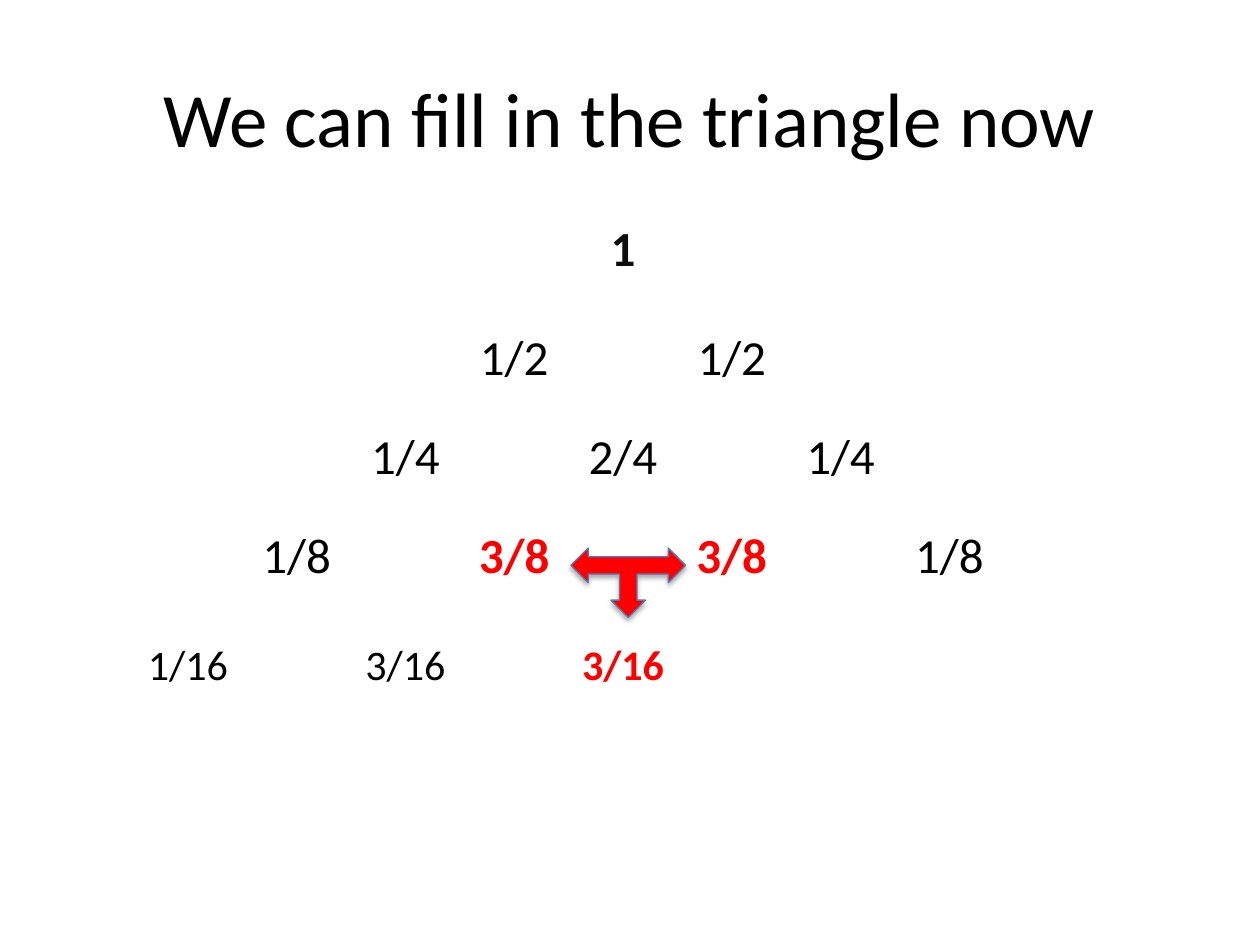
"""Build a slide with a partly filled probability triangle."""
import lxml.etree
import pptx
import pptx.dml.color
import pptx.enum.shapes
import pptx.enum.text
import pptx.oxml.ns
import pptx.util

Cm = pptx.util.Cm
Pt = pptx.util.Pt
qn = pptx.oxml.ns.qn

FONT = "Calibri"
COLOURS = {
    "paper": "FFFFFF",
    "text": "000000",
    "apex": "0D0D0D",
    "highlight": "FF0000",
    "outline": "4B7EBC",
}
TRIANGLE = [
    ["1"],
    ["1/2", "1/2"],
    ["1/4", "2/4", "1/4"],
    ["1/8", "3/8", "3/8", "1/8"],
    ["1/16", "3/16", "3/16"],
]
HIGHLIGHTED = {(3, 1), (3, 2), (4, 2)}
ROW_HEIGHTS = [2.2, 2.2, 1.78, 2.2, 2.2]
COLUMN_COUNT = 2 * len(TRIANGLE) - 1


def rgb(name):
    """Return the named colour."""
    return pptx.dml.color.RGBColor.from_string(COLOURS[name])


def place(shape, box):
    """Move a shape to a box of left, top, width and height in centimetres."""
    shape.left, shape.top, shape.width, shape.height = map(Cm, box)


def write(text_frame, text, size, colour, bold=False):
    """Write one centred run into a text frame."""
    paragraph = text_frame.paragraphs[0]
    paragraph.alignment = pptx.enum.text.PP_ALIGN.CENTER
    run = paragraph.add_run()
    run.text = text
    run.font.name = FONT
    run.font.size = Pt(size)
    run.font.bold = bold
    run.font.color.rgb = rgb(colour)


def add_colour(parent, name):
    """Append a colour element to an XML parent and return it."""
    return lxml.etree.SubElement(parent, qn("a:srgbClr"), val=COLOURS[name])


def style_cell(cell, is_first_row, is_second_row):
    """Give a cell its borders, fill and vertical centring."""
    widths = {
        "a:lnL": 1,
        "a:lnR": 1,
        "a:lnT": 3 if is_second_row else 1,
        "a:lnB": 3 if is_first_row else 1,
    }
    properties = cell._tc.get_or_add_tcPr()
    for tag, width in widths.items():
        line = lxml.etree.SubElement(properties, qn(tag), w=str(Pt(width)))
        add_colour(lxml.etree.SubElement(line, qn("a:solidFill")), "paper")
    cell.fill.solid()
    cell.fill.fore_color.rgb = rgb("paper")
    cell.vertical_anchor = pptx.enum.text.MSO_ANCHOR.MIDDLE


def add_title(slide, box):
    """Fill the title placeholder."""
    title = slide.shapes.title
    place(title, box)
    title.text_frame.vertical_anchor = pptx.enum.text.MSO_ANCHOR.MIDDLE
    write(title.text_frame, "We can fill in the triangle now", 44, "text")


def add_triangle(slide, box):
    """Add the table that spreads the triangle over every other column."""
    frame = slide.shapes.add_table(len(TRIANGLE), COLUMN_COUNT, *map(Cm, box))
    table = frame.table
    table.first_row = table.horz_banding = False
    for column in table.columns:
        column.width = Cm(box[2] / COLUMN_COUNT)
    for row_index, entries in enumerate(TRIANGLE):
        table.rows[row_index].height = Cm(ROW_HEIGHTS[row_index])
        for cell in table.rows[row_index].cells:
            style_cell(cell, row_index == 0, row_index == 1)
        size = 24 if row_index == len(TRIANGLE) - 1 else 28
        for position, entry in enumerate(entries):
            is_highlighted = (row_index, position) in HIGHLIGHTED
            is_apex = row_index == 0
            colour = "highlight" if is_highlighted else "apex" if is_apex else "text"
            column_index = len(TRIANGLE) - 1 - row_index + 2 * position
            cell = table.cell(row_index, column_index)
            write(cell.text_frame, entry, size, colour, is_highlighted or is_apex)


def add_sum_arrow(slide, box):
    """Add the three-way arrow that joins two entries to their sum below."""
    arrow = slide.shapes.add_shape(
        pptx.enum.shapes.MSO_SHAPE.LEFT_RIGHT_UP_ARROW, *map(Cm, box))
    arrow.fill.solid()
    arrow.fill.fore_color.rgb = rgb("highlight")
    arrow.line.color.rgb = rgb("outline")
    arrow.line.width = Pt(0.75)
    arrow.shadow.inherit = False
    properties = arrow._element.spPr
    properties.find(qn("a:xfrm")).set("flipV", "1")
    shadow = lxml.etree.SubElement(
        properties.find(qn("a:effectLst")), qn("a:outerShdw"),
        blurRad=str(Pt(3.1)), dist=str(Pt(1.8)), dir="5400000", rotWithShape="0")
    shadow_colour = add_colour(shadow, "text")
    lxml.etree.SubElement(shadow_colour, qn("a:alpha"), val="35000")


def add_diagram(slide, box):
    """Place the triangle and its arrow relative to the box."""
    left, top, width, height = box
    add_triangle(slide, box)
    add_sum_arrow(slide, (left + 8.82, top + 7.11, 2.31, 1.4))


def main():
    """Build and save the presentation."""
    presentation = pptx.Presentation()
    presentation.slide_width = Cm(25.4)
    presentation.slide_height = Cm(19.05)
    slide = presentation.slides.add_slide(presentation.slide_layouts[5])
    add_title(slide, (1.27, 0.76, 22.86, 3.18))
    add_diagram(slide, (2.69, 3.94, 19.74, sum(ROW_HEIGHTS)))
    presentation.save("out.pptx")


if __name__ == "__main__":
    main()
